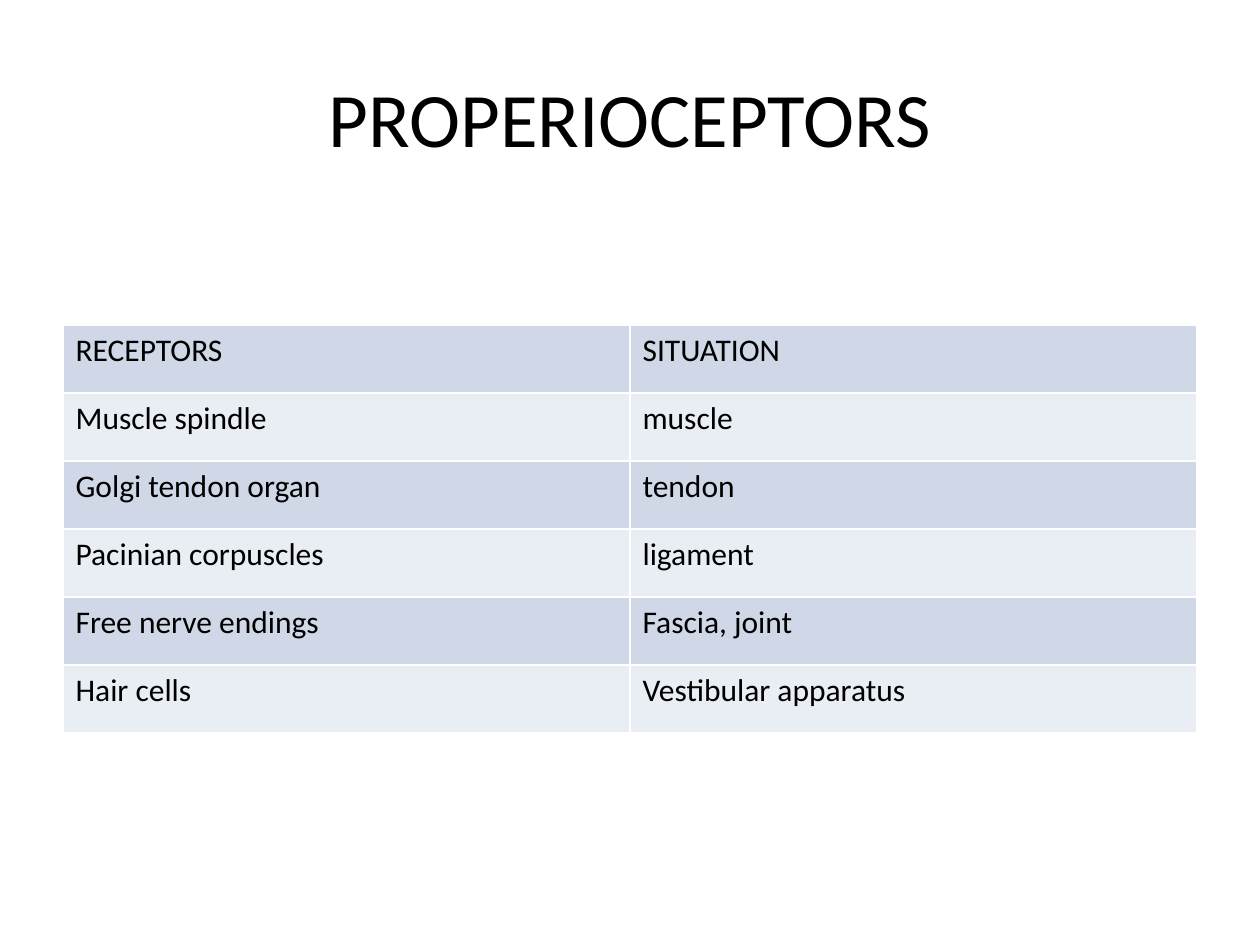
from pptx import Presentation
from pptx.dml.color import RGBColor as Color
from pptx.enum.text import MSO_ANCHOR as Anchor, PP_ALIGN as Align
from pptx.oxml import parse_xml
from pptx.oxml.ns import nsdecls
from pptx.util import Inches, Pt

# Content
TITLE = "PROPERIOCEPTORS"
RECEPTOR_ROWS = [
    ("RECEPTORS", "SITUATION"),
    ("Muscle spindle", "muscle"),
    ("Golgi tendon organ", "tendon"),
    ("Pacinian corpuscles", "ligament"),
    ("Free nerve endings", "Fascia, joint"),
    ("Hair cells", "Vestibular apparatus"),
]

THEME = {
    "font": "Calibri",
    "text": "000000",
    "bands": ("D0D8E8", "E9EDF4"),
    "border": "FFFFFF",
    "border_width": 1,
    "title_size": 44,
    "cell_size": 18,
}

# Layout in inches
MARGIN, WIDTH = 0.5, 9
TITLE_TOP, TITLE_HEIGHT = 0.3, 1.25
TABLE_TOP, ROW_HEIGHT = 2.58, 0.54


def write(para, text, size):
    span = para.add_run()
    span.text = text
    span.font.color.rgb = Color.from_string(THEME["text"])
    for name, value in {"name": THEME["font"], "size": Pt(size)}.items():
        setattr(span.font, name, value)


def add_borders(cell):
    properties = cell._tc.get_or_add_tcPr()
    for side in ("lnL", "lnR", "lnT", "lnB"):
        properties.append(parse_xml(
            f'<a:{side} {nsdecls("a")} w="{Pt(THEME["border_width"])}"><a:solidFill>'
            f'<a:srgbClr val="{THEME["border"]}"/></a:solidFill></a:{side}>'))


def add_title(page):
    box = page.shapes.add_textbox(
        *map(Inches, (MARGIN, TITLE_TOP, WIDTH, TITLE_HEIGHT)))
    frame = box.text_frame
    for name, value in {"word_wrap": True, "vertical_anchor": Anchor.MIDDLE}.items():
        setattr(frame, name, value)
    para = frame.paragraphs[0]
    para.alignment = Align.CENTER
    write(para, TITLE, THEME["title_size"])


def add_receptor_table(page):
    row_count, column_count = len(RECEPTOR_ROWS), len(RECEPTOR_ROWS[0])
    table = page.shapes.add_table(
        row_count, column_count,
        *map(Inches, (MARGIN, TABLE_TOP, WIDTH, ROW_HEIGHT * row_count))).table
    for name, value in {"first_row": False, "horz_banding": False}.items():
        setattr(table, name, value)
    for row_index, texts in enumerate(RECEPTOR_ROWS):
        band = THEME["bands"][row_index % 2]
        for column_index, text in enumerate(texts):
            cell = table.cell(row_index, column_index)
            add_borders(cell)
            cell.fill.solid()
            cell.fill.fore_color.rgb = Color.from_string(band)
            write(cell.text_frame.paragraphs[0], text, THEME["cell_size"])


def main():
    deck = Presentation()
    deck.slide_width, deck.slide_height = Inches(10), Inches(7.5)
    page = deck.slides.add_slide(deck.slide_layouts[6])
    add_title(page)
    add_receptor_table(page)
    deck.save("out.pptx")


if __name__ == "__main__":
    main()
